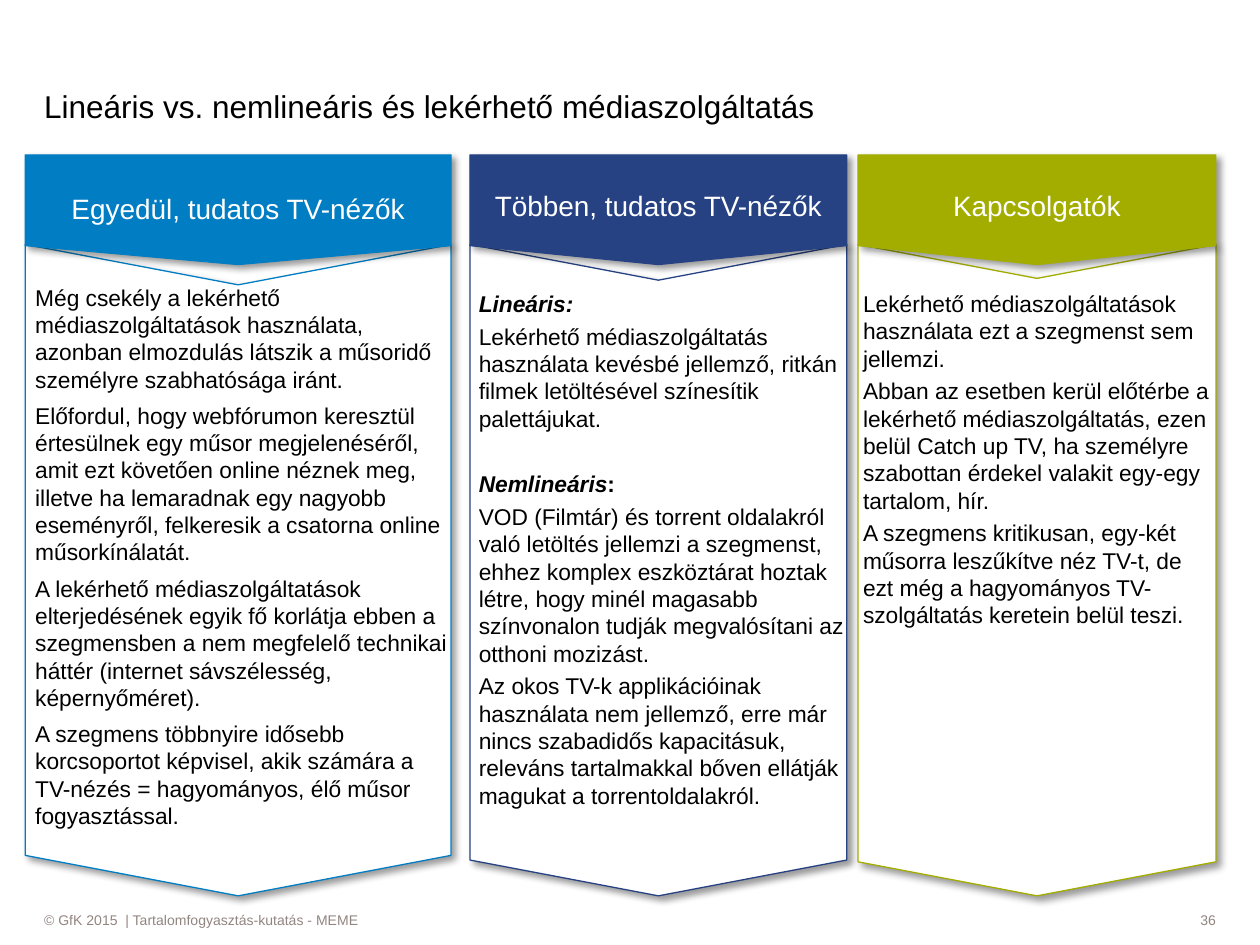
from dataclasses import dataclass

from pptx import Presentation
from pptx.dml.color import RGBColor
from pptx.enum.shapes import MSO_SHAPE
from pptx.enum.text import MSO_ANCHOR, PP_ALIGN
from pptx.oxml import parse_xml
from pptx.oxml.ns import nsdecls, qn
from pptx.util import Inches, Pt


@dataclass(frozen=True)
class Theme:
    font: str = "Arial"
    black: str = "000000"
    white: str = "FFFFFF"
    grey: str = "928580"
    blue: str = "007DC3"
    navy: str = "264283"
    green: str = "A2AD00"
    title: int = 18
    heading: int = 16
    body: int = 13
    footer: int = 8


THEME = Theme()

# Column bands, in inches
HEADER_TOP, HEADER_SIDE, HEADER_TIP = 1.23, 1.95, 2.1
BODY_TOP, BODY_HEIGHT = 1.94, 5.17

# A paragraph is a list of (text, bold, italic) runs, or a plain string
COLUMNS = [
    dict(
        left=0.2, width=3.38, color=THEME.blue,
        heading="Egyedül, tudatos TV-nézők", heading_inset=0.1,
        text_box=(0.28, 2.25, 3.3, 4.8), gap=5,
        paragraphs=[
            "Még csekély a lekérhető médiaszolgáltatások használata, azonban "
            "elmozdulás látszik a műsoridő személyre szabhatósága iránt.",
            "Előfordul, hogy webfórumon keresztül értesülnek egy műsor "
            "megjelenéséről, amit ezt követően online néznek meg, illetve ha "
            "lemaradnak egy nagyobb eseményről, felkeresik a csatorna online "
            "műsorkínálatát.",
            "A lekérhető médiaszolgáltatások elterjedésének egyik fő korlátja "
            "ebben a szegmensben a nem megfelelő technikai háttér (internet "
            "sávszélesség, képernyőméret).",
            "A szegmens többnyire idősebb korcsoportot képvisel, akik számára a "
            "TV-nézés = hagyományos, élő műsor fogyasztással.",
        ],
    ),
    dict(
        left=3.73, width=2.99, color=THEME.navy,
        heading="Többen, tudatos TV-nézők", heading_inset=0.05,
        text_box=(3.8, 2.3, 2.91, 4.84), gap=3,
        paragraphs=[
            [("Lineáris:", True, True)],
            "Lekérhető médiaszolgáltatás használata kevésbé jellemző, ritkán "
            "filmek letöltésével színesítik palettájukat.",
            [("Nemlineáris", True, True), (":", True, False)],
            "VOD (Filmtár) és torrent oldalakról való letöltés jellemzi a "
            "szegmenst, ehhez komplex eszköztárat hoztak létre, hogy minél "
            "magasabb színvonalon tudják megvalósítani az otthoni mozizást.",
            "Az okos TV-k applikációinak használata nem jellemző, erre már "
            "nincs szabadidős kapacitásuk, releváns tartalmakkal bőven ellátják "
            "magukat a torrentoldalakról.",
        ],
    ),
    dict(
        left=6.81, width=2.84, color=THEME.green,
        heading="Kapcsolgatók", heading_inset=0.05,
        text_box=(6.85, 2.3, 2.76, 4.37), gap=3,
        paragraphs=[
            "Lekérhető médiaszolgáltatások használata ezt a szegmenst sem "
            "jellemzi.",
            "Abban az esetben kerül előtérbe a lekérhető médiaszolgáltatás, "
            "ezen belül Catch up TV, ha személyre szabottan érdekel valakit "
            "egy-egy tartalom, hír.",
            "A szegmens kritikusan, egy-két műsorra leszűkítve néz TV-t, de ezt "
            "még a hagyományos TV-szolgáltatás keretein belül teszi.",
        ],
    ),
]
SECTION_GAP = 22  # space above a bold heading further down a column


def style_font(paragraph, size, color):
    paragraph.font.name = THEME.font
    paragraph.font.size = Pt(size)
    paragraph.font.color.rgb = RGBColor.from_string(color)


def fill_shape(shape, color):
    shape.fill.solid()
    shape.fill.fore_color.rgb = RGBColor.from_string(color)
    shape.shadow.inherit = False


def set_frame(frame, anchor, insets=(0, 0, 0, 0)):
    frame.word_wrap = True
    frame.vertical_anchor = anchor
    (frame.margin_left, frame.margin_top,
     frame.margin_right, frame.margin_bottom) = map(Inches, insets)


def set_line_of_text(frame, text, size, color, align=PP_ALIGN.LEFT):
    paragraph = frame.paragraphs[0]
    paragraph.text = text
    paragraph.alignment = align
    style_font(paragraph, size, color)


def add_text(slide, box, anchor):
    frame = slide.shapes.add_textbox(*map(Inches, box)).text_frame
    set_frame(frame, anchor)
    return frame


def style_panel(shape, fill, line):
    fill_shape(shape, fill)
    shape.line.color.rgb = RGBColor.from_string(line)
    shape.line.width = Pt(0.75)
    # Soft shadow towards the lower right
    effects = shape.element.spPr.find(qn("a:effectLst"))
    effects.append(parse_xml(
        f'<a:outerShdw {nsdecls("a")} blurRad="{Pt(4)}" dist="{Pt(3)}" '
        f'dir="2700000" algn="tl" rotWithShape="0"><a:srgbClr '
        f'val="{THEME.black}"><a:alpha val="40000"/></a:srgbClr></a:outerShdw>'))


def add_body_panel(slide, left, width, color):
    # The chevron is drawn lying down and turned about its centre
    center_x, center_y = left + width / 2, BODY_TOP + BODY_HEIGHT / 2
    panel = slide.shapes.add_shape(
        MSO_SHAPE.CHEVRON,
        Inches(center_x - BODY_HEIGHT / 2), Inches(center_y - width / 2),
        Inches(BODY_HEIGHT), Inches(width))
    panel.rotation = 90
    panel.adjustments[0] = 0.095
    style_panel(panel, THEME.white, color)


def add_header(slide, left, width, color, heading, inset):
    right = left + width
    builder = slide.shapes.build_freeform(
        Inches(right), Inches(HEADER_TOP), scale=1.0)
    outline = [(left, HEADER_TOP), (left, HEADER_SIDE),
               (left + width / 2, HEADER_TIP), (right, HEADER_SIDE)]
    builder.add_line_segments([(Inches(x), Inches(y)) for x, y in outline])
    header = builder.convert_to_shape()
    style_panel(header, color, color)
    set_frame(header.text_frame, MSO_ANCHOR.MIDDLE, (0.1, inset, 0.1, 0.12))
    set_line_of_text(header.text_frame, heading, THEME.heading, THEME.white,
                     PP_ALIGN.CENTER)


def add_body_text(slide, box, paragraphs, gap):
    frame = add_text(slide, box, MSO_ANCHOR.TOP)
    for index, content in enumerate(paragraphs):
        paragraph = frame.add_paragraph() if index else frame.paragraphs[0]
        is_plain = isinstance(content, str)
        if index:
            paragraph.space_before = Pt(gap if is_plain else SECTION_GAP)
        style_font(paragraph, THEME.body, THEME.black)
        for text, bold, italic in [(content, False, False)] if is_plain else content:
            run = paragraph.add_run()
            run.text = text
            run.font.bold, run.font.italic = bold, italic


def add_column(slide, left, width, color, heading, heading_inset,
               text_box, gap, paragraphs):
    add_body_panel(slide, left, width, color)
    add_body_text(slide, text_box, paragraphs, gap)
    add_header(slide, left, width, color, heading, heading_inset)


def add_footer(slide, top, height):
    for left, width, text, align in [
        (0.35, 7.72, "© GfK 2015  | Tartalomfogyasztás-kutatás - MEME", PP_ALIGN.LEFT),
        (8.23, 1.42, "36", PP_ALIGN.RIGHT),
    ]:
        bar = slide.shapes.add_shape(
            MSO_SHAPE.RECTANGLE, *map(Inches, (left, top, width, height)))
        fill_shape(bar, THEME.white)
        bar.line.fill.background()
        set_frame(bar.text_frame, MSO_ANCHOR.MIDDLE)
        set_line_of_text(bar.text_frame, text, THEME.footer, THEME.grey, align)


def main():
    presentation = Presentation()
    presentation.slide_width, presentation.slide_height = Inches(10), Inches(7.5)
    slide = presentation.slides.add_slide(presentation.slide_layouts[6])
    add_footer(slide, 7.22, 0.16)
    title = add_text(slide, (0.35, 0.28, 6.93, 0.71), MSO_ANCHOR.BOTTOM)
    set_line_of_text(title, "Lineáris vs. nemlineáris és lekérhető médiaszolgáltatás",
                     THEME.title, THEME.black)
    for column in COLUMNS:
        add_column(slide, **column)
    presentation.save("out.pptx")


if __name__ == "__main__":
    main()
